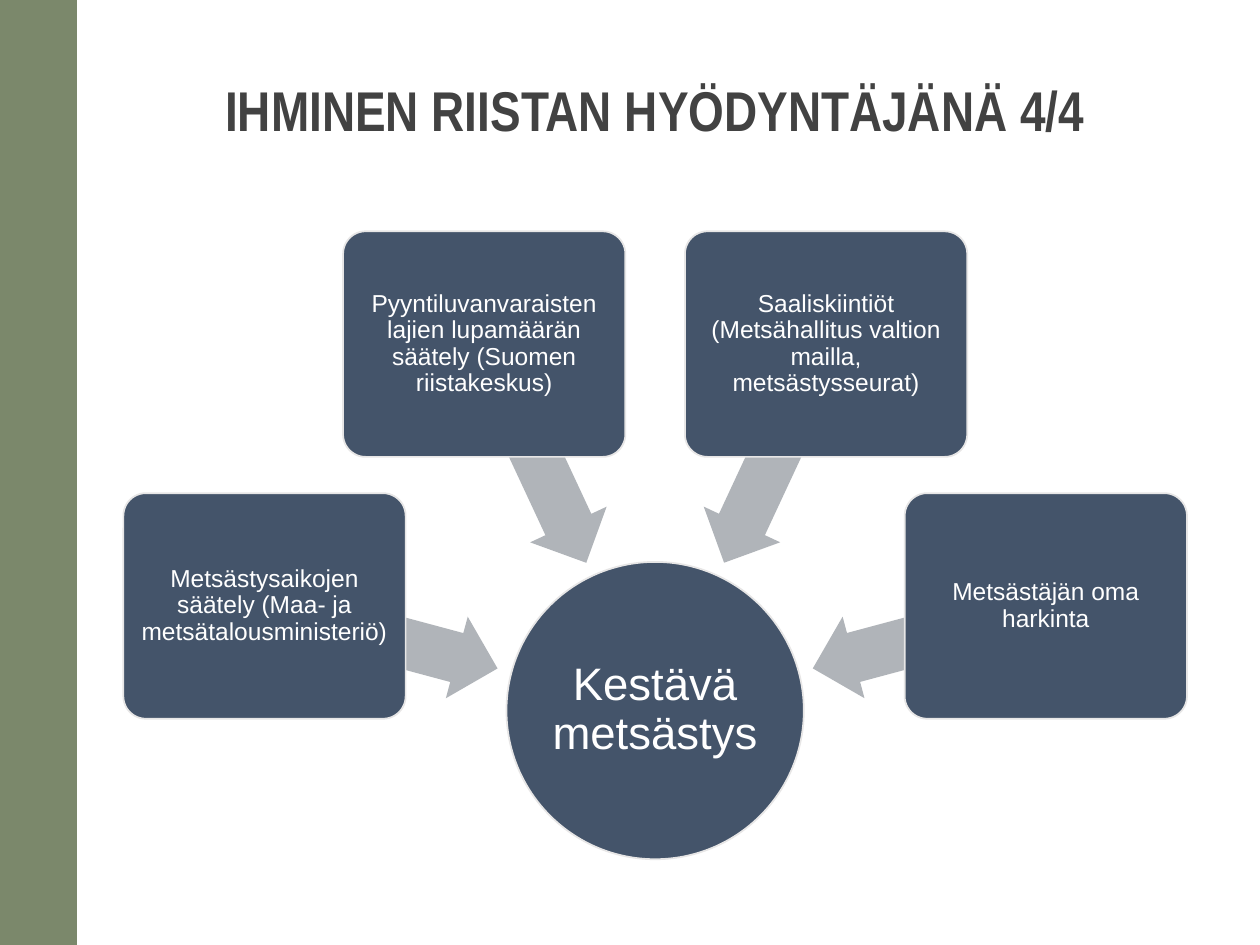
"""Build a slide on how four kinds of regulation lead to sustainable hunting."""
from dataclasses import dataclass
from math import cos, radians, sin

from pptx import Presentation
from pptx.dml.color import RGBColor
from pptx.enum.shapes import MSO_SHAPE as Preset
from pptx.enum.text import MSO_ANCHOR as Anchor, PP_ALIGN as Align
from pptx.shapes.autoshape import Shape
from pptx.text.text import TextFrame
from pptx.util import Inches, Pt

NAVY, PALE, GREY = "44546A", "E7E6E6", "B0B4B9"
HUB_X, HUB_Y, HUB_SIZE = 5.2, 5.64, 2.36
ARROW_RADIUS, BOX_RADIUS = 2.25, 3.21


@dataclass(frozen=True)
class Factor:
    """A regulating factor and its direction from the hub in degrees."""
    angle: int
    text: str


FACTORS = [
    Factor(195, "Metsästysaikojen säätely (Maa- ja metsätalousministeriö)"),
    Factor(245, "Pyyntiluvanvaraisten lajien lupamäärän säätely (Suomen riistakeskus)"),
    Factor(295, "Saaliskiintiöt (Metsähallitus valtion mailla, metsästysseurat)"),
    Factor(345, "Metsästäjän oma harkinta"),
]


def color(value: str) -> RGBColor:
    """Turn a hex string into a colour."""
    return RGBColor.from_string(value)


def write(frame: TextFrame, text: str, *, size: float, font: str = "Arial",
          ink: str = "FFFFFF", bold: bool = False, inset: float = 0.03) -> None:
    """Write one centred paragraph in the frame."""
    frame.text = text
    frame.word_wrap = True
    frame.vertical_anchor = Anchor.MIDDLE
    frame.margin_left = frame.margin_right = Inches(inset)
    frame.margin_top = frame.margin_bottom = Inches(inset)
    paragraph = frame.paragraphs[0]
    paragraph.alignment = Align.CENTER
    paragraph.line_spacing = 0.9
    run_font = paragraph.runs[0].font
    run_font.name, run_font.size, run_font.bold = font, Pt(size), bold
    run_font.color.rgb = color(ink)


def draw(slide, preset: Preset, center: tuple[float, float], width: float,
         height: float, fill: str, line: str | None = None) -> Shape:
    """Draw a filled preset shape around its centre."""
    x, y = center
    shape = slide.shapes.add_shape(preset, Inches(x - width / 2), Inches(y - height / 2),
                                   Inches(width), Inches(height))
    shape.shadow.inherit = False
    shape.fill.solid()
    shape.fill.fore_color.rgb = color(fill)
    if line:
        shape.line.color.rgb = color(line)
        shape.line.width = Pt(1)
    else:
        shape.line.fill.background()
    return shape


def around_hub(angle: int, radius: float) -> tuple[float, float]:
    """Find the point at an angle and distance from the hub."""
    return HUB_X + radius * cos(radians(angle)), HUB_Y + radius * sin(radians(angle))


def draw_factor(slide, factor: Factor) -> None:
    """Draw a factor's box and its arrow towards the hub."""
    arrow = draw(slide, Preset.LEFT_ARROW, around_hub(factor.angle, ARROW_RADIUS),
                 1.91, 0.67, GREY)
    arrow.adjustments[0], arrow.adjustments[1] = 0.6, 0.5
    arrow.rotation = factor.angle
    box = draw(slide, Preset.ROUNDED_RECTANGLE, around_hub(factor.angle, BOX_RADIUS),
               2.24, 1.79, NAVY, PALE)
    box.adjustments[0] = 0.1
    write(box.text_frame, factor.text, size=14)


def main() -> None:
    """Assemble and save the slide."""
    deck = Presentation()
    deck.slide_width, deck.slide_height = Inches(10), Inches(7.5)
    slide = deck.slides.add_slide(deck.slide_layouts[5])
    draw(slide, Preset.RECTANGLE, (0.305, 3.75), 0.61, 7.5, "7B886B")

    title = slide.shapes.title
    title.left, title.top = Inches(0.83), Inches(0.4)
    title.width, title.height = Inches(8.74), Inches(1)
    write(title.text_frame, "IHMINEN RIISTAN HYÖDYNTÄJÄNÄ 4/4", size=32,
          font="Arial Narrow", ink="424242", bold=True, inset=0.05)

    hub = draw(slide, Preset.OVAL, (HUB_X, HUB_Y), HUB_SIZE, HUB_SIZE, NAVY, PALE)
    write(hub.text_frame, "Kestävä metsästys", size=26, inset=0.02)
    for factor in FACTORS:
        draw_factor(slide, factor)
    deck.save("out.pptx")


if __name__ == "__main__":
    main()
